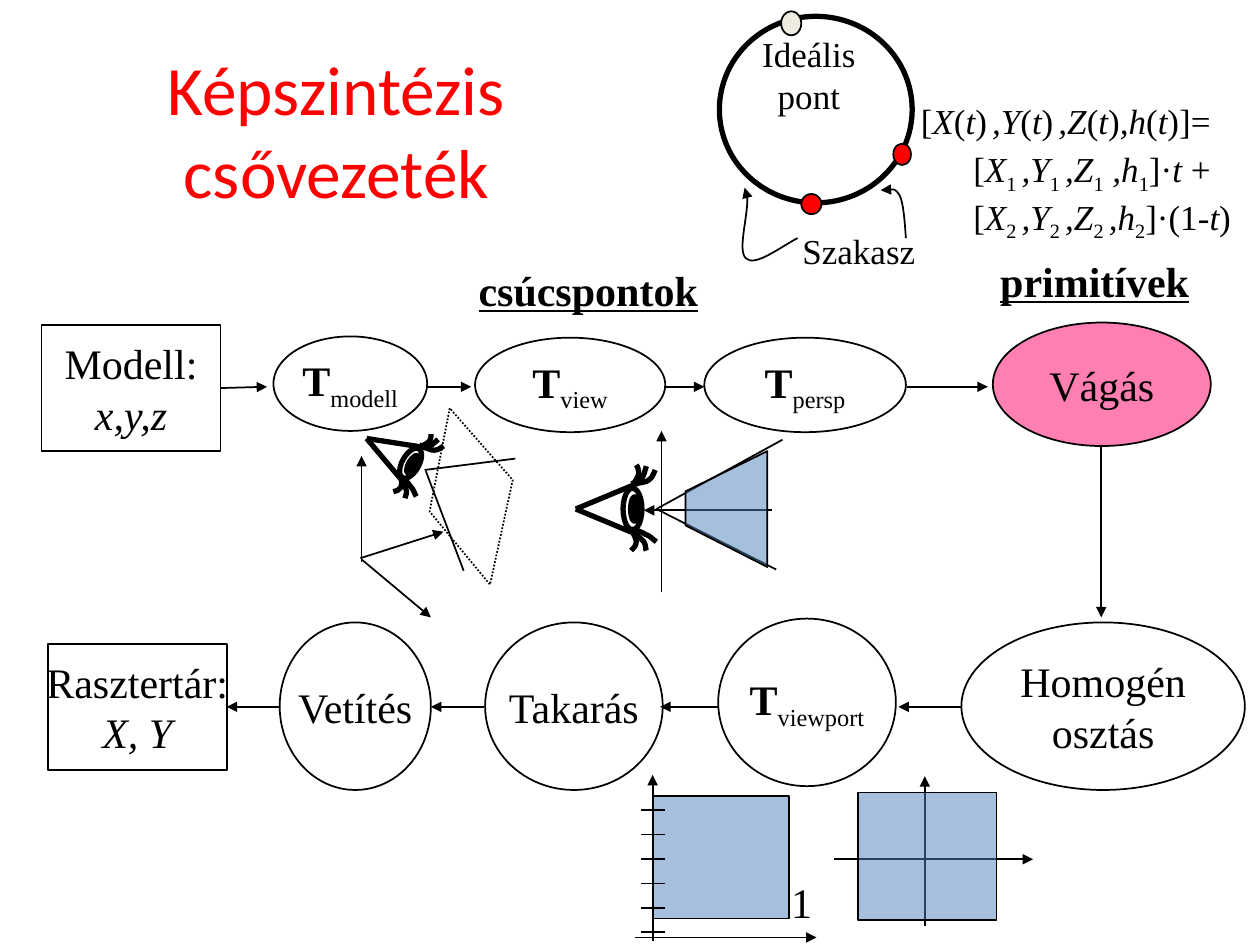
from math import cos, radians, sin
from lxml.etree import SubElement
from pptx import Presentation
from pptx.dml.color import RGBColor
from pptx.enum.dml import MSO_LINE
from pptx.enum.shapes import MSO_CONNECTOR, MSO_SHAPE
from pptx.enum.text import MSO_ANCHOR, MSO_AUTO_SIZE, PP_ALIGN
from pptx.oxml.ns import qn
from pptx.util import Inches, Pt

BLACK = RGBColor(0, 0, 0)
WHITE = RGBColor(255, 255, 255)
RED = RGBColor(255, 0, 0)
PINK = RGBColor(255, 0, 102)
BLUE = RGBColor(79, 129, 189)
CREAM = RGBColor(238, 236, 225)
SERIF = "Times New Roman"
RECT, OVAL = MSO_SHAPE.RECTANGLE, MSO_SHAPE.OVAL
LEFT, CENTER = PP_ALIGN.LEFT, PP_ALIGN.CENTER
ITALIC, BOLD, UNDERLINE, SUBSCRIPT = MARKS = "*~^_"
TOP_ROW, BOTTOM_ROW = 3.07, 5.61

NODES = {
    "model": ("Modell:\n*x,y,z*", RECT, (0.33, 2.58, 1.42, 1)),
    "model transform": ("~T~_modell_", OVAL, (2.17, 2.67, 1.22, 0.75)),
    "view": ("~T~_view_", OVAL, (3.77, 2.68, 1.51, 0.75)),
    "perspective": ("~T~_persp_", OVAL, (5.59, 2.68, 1.6, 0.75)),
    "clipping": ("Vágás", OVAL, (7.88, 2.56, 1.73, 0.98)),
    "division": ("Homogén\nosztás", OVAL, (7.63, 4.94, 2.25, 1.33)),
    "viewport": ("~T~_viewport_", OVAL, (5.7, 4.91, 1.41, 1.33)),
    "hiding": ("Takarás", OVAL, (3.85, 4.94, 1.41, 1.33)),
    "projection": ("Vetítés", OVAL, (2.22, 4.94, 1.2, 1.33)),
    "raster": ("Rasztertár:\n*X, Y*", RECT, (0.38, 5.11, 1.42, 1)),
}
TOP_ARROWS = [(3.39, 3.74), (5.27, 5.59), (7.2, 7.84)]
BOTTOM_ARROWS = [(7.63, 7.13), (5.71, 5.24), (3.84, 3.42)]

LABELS = [
    ("~^csúcspontok^~", (3.7, 2.05, 1.94, 0.5), 24),
    ("~^primitívek^~", (7.84, 1.98, 1.7, 0.5), 24),
    ("1", (6.18, 6.91, 0.37, 0.5), 24),
    ("Szakasz", (6.27, 1.77, 1.1, 0.43), 20),
]
FORMULA = ("[*X*(*t*)_ _*,Y*(*t*)_ _*,Z*(*t*)*,h*(*t*)]=\n"
           "[*X*_1 _*,Y*_1 _*,Z*_1_* ,h*_1_]·*t *+\n"
           "[*X*_2 _*,Y*_2 _*,Z*_2 _*,h*_2_]·(1-*t*)")

VIEW_RAYS = [((5.21, 4.04), (6.21, 3.49)), ((5.21, 4.04), (6.16, 4.52))]
VIEW_AXES = [((6.13, 4.05), (5.11, 4.05)), ((5.25, 4.7), (5.25, 3.42))]
FRUSTUM = [(5.44, 4.17), (6.09, 4.5), (6.09, 3.58), (5.44, 3.9)]
WORLD_AXES = [((2.87, 4.46), (2.87, 3.62)), ((2.87, 4.44), (3.42, 4.9)),
              ((2.86, 4.43), (3.52, 4.22))]
WINDOW_AXES = [((3.37, 3.73), (4.09, 3.64)), ((3.38, 3.74), (3.68, 4.53))]
WINDOW = [(3.57, 3.24), (3.41, 4.06), (3.89, 4.64), (4.07, 3.81)]
CUBE_AXES = [((7.34, 7.35), (7.34, 6.16)), ((6.62, 6.82), (8.2, 6.82))]
SCREEN_AXES = [((5.18, 7.47), (5.18, 6.15)), ((5.04, 7.44), (6.48, 7.44))]
SEGMENT_POINTERS = [
    [(7.19, 1.89), (7.18, 1.75), (7.17, 1.61), (7.14, 1.55), (7.1, 1.49), (7.04, 1.5), (6.99, 1.51)],
    [(6.33, 1.89), (6.18, 1.97), (5.99, 2.12), (5.92, 2.05), (5.85, 1.99), (5.98, 1.57), (5.91, 1.49)],
]

EYE_LIDS = [(0.48, -0.2), (0.48, 0.2)]
EYE_BALLS = [((0.45, 0), (0.15, 0.33), WHITE), ((0.47, 0), (0.07, 0.2), BLACK)]
EYE_LASHES = [
    [(0.44, -0.2), (0.47, -0.21), (0.5, -0.21), (0.52, -0.24), (0.54, -0.26), (0.55, -0.31), (0.56, -0.34)],
    [(0.48, -0.2), (0.5, -0.21), (0.56, -0.21), (0.58, -0.23), (0.61, -0.25), (0.62, -0.29), (0.63, -0.31)],
    [(0.44, 0.16), (0.49, 0.17), (0.52, 0.18), (0.55, 0.2), (0.59, 0.21), (0.62, 0.25), (0.64, 0.26)],
    [(0.44, 0.16), (0.46, 0.18), (0.52, 0.24), (0.54, 0.26), (0.56, 0.29), (0.55, 0.32), (0.56, 0.33)],
    [(0.44, 0.16), (0.46, 0.2), (0.48, 0.24), (0.48, 0.26), (0.48, 0.29), (0.46, 0.31), (0.44, 0.33)],
    [(0.46, -0.2), (0.47, -0.22), (0.5, -0.26), (0.5, -0.29), (0.5, -0.31), (0.49, -0.34), (0.48, -0.35)],
]

deck = Presentation()
deck.slide_width, deck.slide_height = Inches(10), Inches(7.5)
page = deck.slides.add_slide(deck.slide_layouts[6])


def marked_spans(text):
    active, chunk = frozenset(), ""
    for char in text:
        if char not in MARKS:
            chunk += char
            continue
        if chunk:
            yield chunk, active
        active, chunk = active ^ {char}, ""
    if chunk:
        yield chunk, active


def write(frame, text, size=24, align=CENTER, font=SERIF, color=BLACK, wrap=False, anchor=MSO_ANCHOR.MIDDLE):
    frame.word_wrap, frame.vertical_anchor = wrap, anchor
    for index, line in enumerate(text.split("\n")):
        para = frame.add_paragraph() if index else frame.paragraphs[0]
        para.alignment = align
        for chunk, active in marked_spans(line):
            span = para.add_run()
            span.text = chunk
            span.font.name, span.font.size = font, Pt(size)
            span.font.color.rgb = color
            span.font.italic, span.font.bold = ITALIC in active, BOLD in active
            span.font.underline = UNDERLINE in active
            if SUBSCRIPT in active:
                span._r.get_or_add_rPr().set("baseline", "-25000")


def add_text(text, area, size, **options):
    frame = page.shapes.add_textbox(*map(Inches, area)).text_frame
    write(frame, text, size, **options)
    return frame


def add_note(text, area, size, **options):
    frame = add_text(text, area, size, anchor=MSO_ANCHOR.TOP, **options)
    frame.auto_size = MSO_AUTO_SIZE.SHAPE_TO_FIT_TEXT
    return frame


def outline(shape, width, arrow=False):
    shape.line.color.rgb, shape.line.width = BLACK, Pt(width)
    if arrow:
        SubElement(shape._element.spPr.find(qn("a:ln")), qn("a:tailEnd"), type="triangle")


def paint(shape, fill=None, width=1, opacity=100, arrow=False):
    shape.shadow.inherit = False
    if fill is None:
        shape.fill.background()
    else:
        shape.fill.solid()
        shape.fill.fore_color.rgb = fill
        if opacity < 100:
            color = shape._element.spPr.find(qn("a:solidFill"))[0]
            SubElement(color, qn("a:alpha"), val=str(opacity * 1000))
    outline(shape, width, arrow)
    return shape


def add_figure(kind, area, fill=None, width=1, opacity=100):
    return paint(page.shapes.add_shape(kind, *map(Inches, area)), fill, width, opacity)


def add_line(start, end, width=1, arrow=False):
    line = page.shapes.add_connector(MSO_CONNECTOR.STRAIGHT, *map(Inches, (*start, *end)))
    outline(line, width, arrow)
    SubElement(line._element.spPr, qn("a:effectLst"))
    return line


def add_lines(pairs, arrow=False):
    for start, end in pairs:
        add_line(start, end, arrow=arrow)


def add_outline(points, closed=False, **options):
    points = [(Inches(x), Inches(y)) for x, y in points]
    builder = page.shapes.build_freeform(*points[0])
    builder.add_line_segments(points[1:], close=closed)
    return paint(builder.convert_to_shape(), **options)


def add_curve(controls, **options):
    shape = add_outline(controls, **options)
    segments = list(shape._element.spPr.iter(qn("a:lnTo")))
    track = segments[0].getparent()
    for first in range(0, len(segments), 3):
        bend = SubElement(track, qn("a:cubicBezTo"))
        for segment in segments[first:first + 3]:
            bend.append(segment[0])
            track.remove(segment)


def add_eye(corner, scale=(1, 1), angle=0):
    turn = radians(angle)

    def place(point):
        x, y = point[0] * scale[0], point[1] * scale[1]
        return corner[0] + x * cos(turn) - y * sin(turn), corner[1] + x * sin(turn) + y * cos(turn)

    for lid in EYE_LIDS:
        add_line(corner, place(lid), width=3)
    for center, size, fill in EYE_BALLS:
        x, y = place(center)
        width, height = size[0] * scale[0], size[1] * scale[1]
        ball = add_figure(OVAL, (x - width / 2, y - height / 2, width, height), fill, 3)
        ball.rotation = angle
    for lash in EYE_LASHES:
        add_curve([place(point) for point in lash], width=3)


add_text("Képszintézis csővezeték", (0.33, 0.4, 4.68, 1.25), 39.6, font="Calibri", color=RED, wrap=True)

boxes = {}
for name, (text, kind, area) in NODES.items():
    fill = PINK if name == "clipping" else None
    boxes[name] = add_figure(kind, area, fill, opacity=50)
    write(boxes[name].text_frame, text)
for row, arrows in ((TOP_ROW, TOP_ARROWS), (BOTTOM_ROW, BOTTOM_ARROWS)):
    add_lines([((start, row), (end, row)) for start, end in arrows], arrow=True)
add_line((1.75, TOP_ROW), (2.12, TOP_ROW), arrow=True).begin_connect(boxes["model"], 3)
add_line((2.22, BOTTOM_ROW), (1.8, BOTTOM_ROW), arrow=True).end_connect(boxes["raster"], 3)
add_line((8.74, 3.54), (8.74, 4.9), arrow=True)

add_eye((4.57, 4.04))
add_lines(VIEW_AXES, arrow=True)
add_lines(VIEW_RAYS)
add_outline(FRUSTUM, closed=True, fill=BLUE, opacity=50)

add_lines(CUBE_AXES, arrow=True)
add_figure(RECT, (6.81, 6.29, 1.1, 1.01), BLUE, opacity=50)

add_lines(WORLD_AXES, arrow=True)
add_lines(WINDOW_AXES)
add_outline(WINDOW, closed=True).line.dash_style = MSO_LINE.ROUND_DOT
add_eye((2.91, 3.48), (0.89, 0.8), 29.4)

add_lines(SCREEN_AXES, arrow=True)
add_figure(RECT, (5.18, 6.32, 1.08, 0.97), BLUE, opacity=50)
ticks = [6.43 + 0.97 * index / 5 for index in range(6)]
add_lines([((5.09, y), (5.28, y)) for y in ticks])

add_figure(OVAL, (5.71, 0.13, 1.53, 1.48), width=3)
add_figure(OVAL, (6.2, 0.09, 0.16, 0.19), CREAM)
add_figure(OVAL, (6.36, 1.54, 0.16, 0.16), RED)
add_figure(OVAL, (7.09, 1.14, 0.14, 0.17), RED)
add_note("Ideális pont", (5.87, 0.21, 1.1, 0.77), 20, wrap=True)
for pointer in SEGMENT_POINTERS:
    add_curve(pointer, arrow=True)

for text, area, size in LABELS:
    add_note(text, area, size, align=LEFT)
formula = add_note(FORMULA, (7.21, 0.74, 2.75, 1.11), 20, align=LEFT, wrap=True)
for para in formula.paragraphs[1:]:
    para._p.get_or_add_pPr().set("marL", str(Pt(30)))

deck.save("out.pptx")
